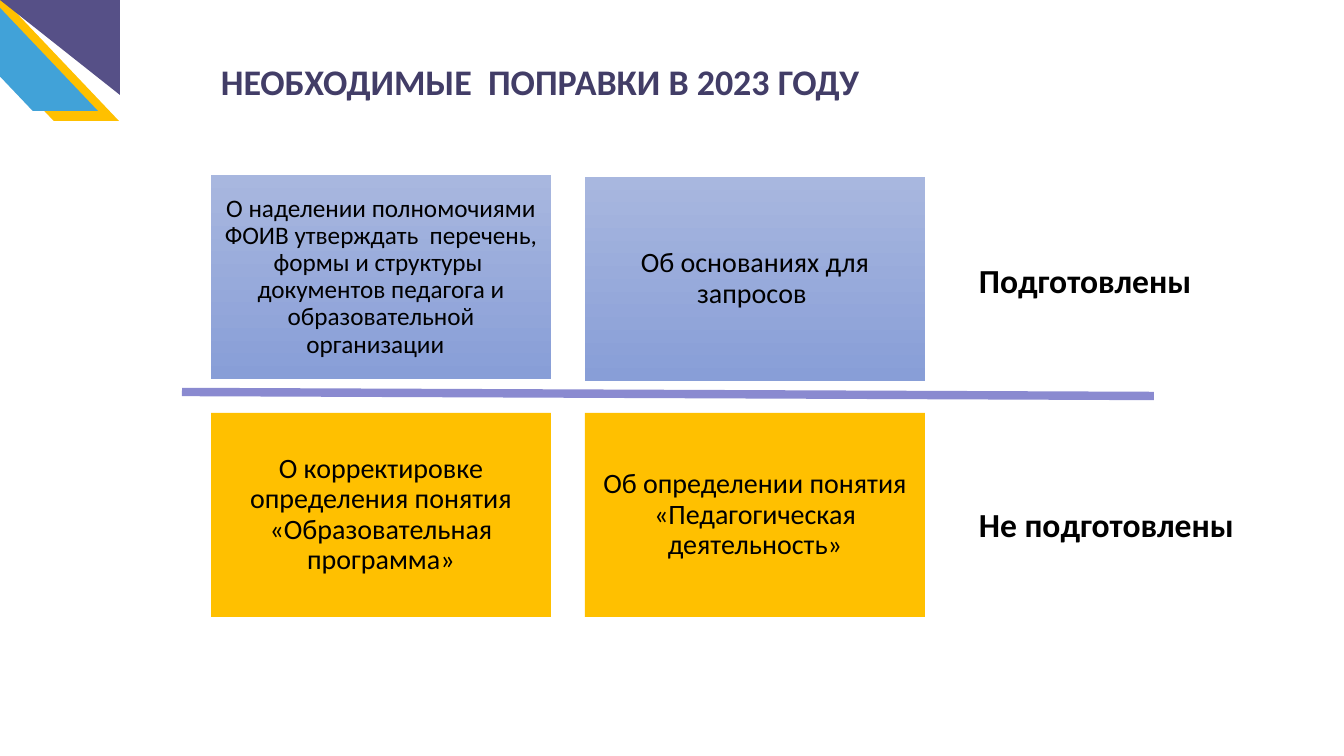
from dataclasses import dataclass

from lxml.etree import SubElement
from pptx import Presentation
from pptx.dml.color import RGBColor
from pptx.enum.shapes import MSO_CONNECTOR, MSO_SHAPE
from pptx.enum.text import MSO_ANCHOR, PP_ALIGN
from pptx.oxml.ns import qn
from pptx.util import Emu, Pt


@dataclass(frozen=True)
class Theme:
    font: str = "Calibri"
    title: str = "423D67"
    text: str = "000000"
    amber: str = "FFC000"
    sky: str = "41A2D8"
    violet: str = "565087"
    divider: str = "8A8AD0"
    ready: tuple = ("A8B7DF", "889ED7")
    title_size: float = 25.7
    label_size: int = 24
    card_size: int = 20
    dense_size: int = 18
    divider_width: int = 6


class SlideBuilder:
    """Draws styled elements on the current slide, measured in px."""

    PX = 914400 / 100.8

    def __init__(self, theme):
        self.theme = theme
        self.prs = Presentation()
        self.prs.slide_width, self.prs.slide_height = self.px(1344, 756)
        self.s = self.prs.slides.add_slide(self.prs.slide_layouts[6])

    def px(self, *lengths):
        return [Emu(round(n * self.PX)) for n in lengths]

    def shape(self, kind, box, fill):
        sp = self.s.shapes.add_shape(kind, *self.px(*box))
        sp.shadow.inherit = False
        sp.line.fill.background()
        if isinstance(fill, tuple):
            sp.fill.gradient()
            sp.fill.gradient_angle = 270
            for position, (stop, color) in enumerate(
                    zip(sp.fill.gradient_stops, fill)):
                stop.color.rgb = RGBColor.from_string(color)
                stop.position = position
        else:
            sp.fill.solid()
            sp.fill.fore_color.rgb = RGBColor.from_string(fill)
        return sp

    def corner(self, kind, box, fill, flips, adjust=None):
        sp = self.shape(kind, box, fill)
        for flip in flips:
            sp._element.spPr.find(qn("a:xfrm")).set(flip, "1")
        if adjust is not None:
            sp.adjustments[0] = adjust

    def run(self, tf, text, size, color, bold=False):
        p = tf.paragraphs[0]
        r = p.add_run()
        r.text = text
        r.font.name = self.theme.font
        r.font.size = Pt(size)
        r.font.bold = bold
        r.font.color.rgb = RGBColor.from_string(color)
        return p

    def text(self, box, text, size, color, wrap=False):
        tf = self.s.shapes.add_textbox(*self.px(*box)).text_frame
        tf.word_wrap = wrap
        self.run(tf, text, size, color, bold=True)

    def card(self, box, text, size, fill, inset):
        tf = self.shape(MSO_SHAPE.RECTANGLE, box, fill).text_frame
        tf.word_wrap = True
        tf.vertical_anchor = MSO_ANCHOR.MIDDLE
        margin, = self.px(inset)
        tf.margin_left = tf.margin_right = margin
        tf.margin_top = tf.margin_bottom = margin
        p = self.run(tf, text, size, self.theme.text)
        p.alignment = PP_ALIGN.CENTER
        p.line_spacing = 0.9

    def line(self, start, end, color, width):
        c = self.s.shapes.add_connector(
            MSO_CONNECTOR.STRAIGHT, *self.px(*start, *end))
        c.line.color.rgb = RGBColor.from_string(color)
        c.line.width = Pt(width)
        SubElement(c._element.spPr, qn("a:effectLst"))


def main():
    t = Theme()
    b = SlideBuilder(t)

    for left, top, color in ((-65, -4, t.amber), (-86, -14, t.sky)):
        b.corner(MSO_SHAPE.PARALLELOGRAM, (left, top, 184, 125), color,
                 ["flipH"], 0.95)
    b.corner(MSO_SHAPE.RIGHT_TRIANGLE, (0, 0, 120, 95), t.violet,
             ["flipH", "flipV"])

    b.text((211, 55, 709, 53), "НЕОБХОДИМЫЕ  ПОПРАВКИ В 2023 ГОДУ",
           t.title_size, t.title, wrap=True)

    cards = (
        (0, 175, t.ready, t.dense_size, 7,
         "О наделении полномочиями ФОИВ утверждать  перечень, формы и "
         "структуры  документов педагога и образовательной организации  "),
        (1, 177, t.ready, t.card_size, 8, "Об основаниях для запросов "),
        (0, 413, t.amber, t.card_size, 8,
         "О корректировке определения понятия «Образовательная программа»"),
        (1, 413, t.amber, t.card_size, 8,
         "Об определении понятия «Педагогическая деятельность»"),
    )
    for column, top, fill, size, inset, text in cards:
        b.card((211 + 374 * column, top, 340, 204), text, size, fill, inset)

    b.line((182, 392), (1154, 396), t.divider, t.divider_width)

    for top, width, text in ((255, 242, "Подготовлены"),
                             (499, 284, "Не подготовлены")):
        b.text((969, top, width, 50), text, t.label_size, t.text)

    b.prs.save("out.pptx")


if __name__ == "__main__":
    main()
